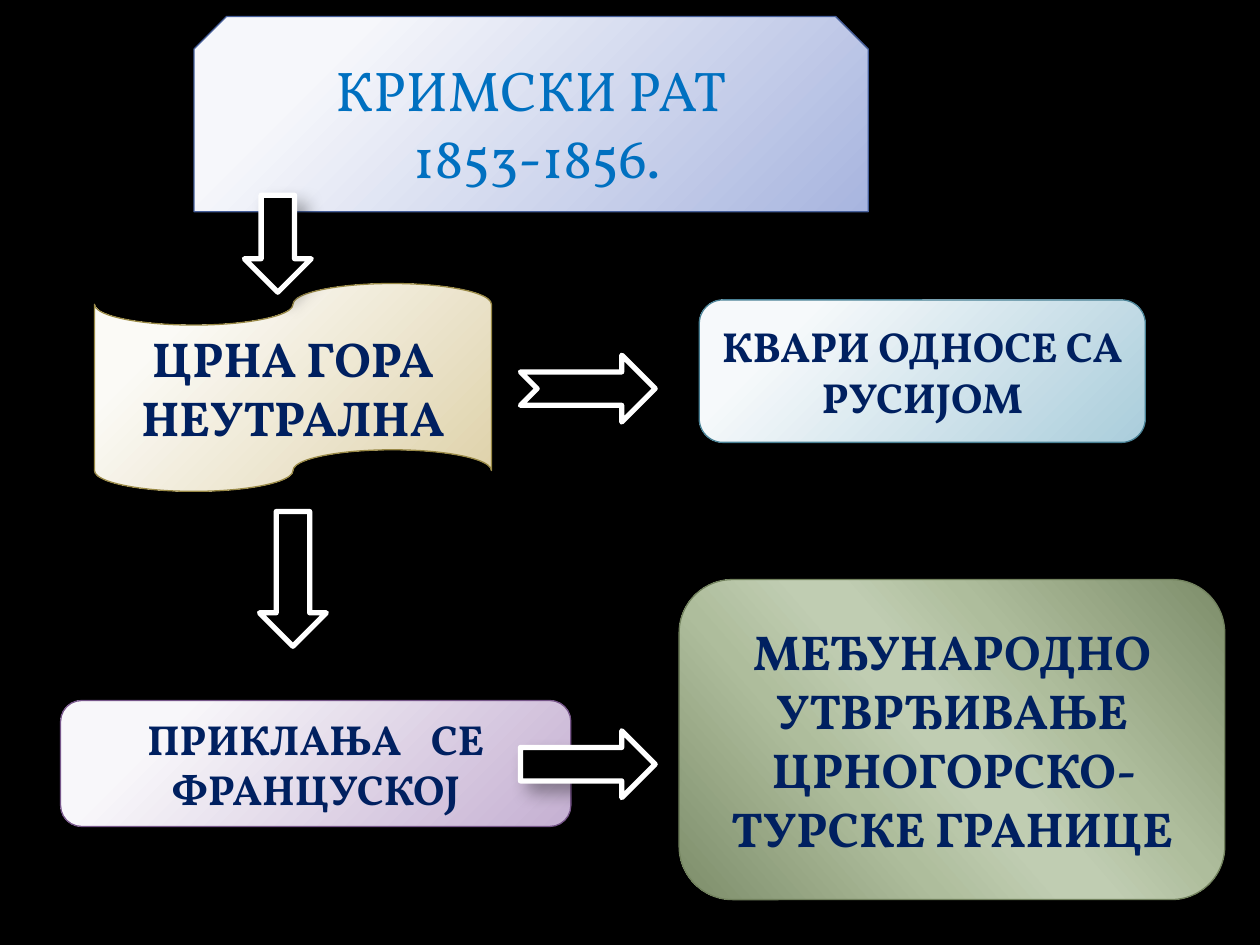
from pptx import Presentation
from pptx.dml.color import RGBColor
from pptx.enum import shapes, text
from pptx.oxml import parse_xml
from pptx.oxml.ns import nsdecls
from pptx.util import Pt

KIND = shapes.MSO_SHAPE
FONT = "Vollkorn"
BLACK = RGBColor(0x00, 0x00, 0x00)
WHITE = RGBColor(0xFF, 0xFF, 0xFF)
BLUE = RGBColor(0x00, 0x70, 0xC0)
NAVY = RGBColor(0x00, 0x20, 0x60)


def fade(pale, deep):
    return [(20, RGBColor.from_string(pale)), (100, RGBColor.from_string(deep))]


OLIVE, SAGE, MINT = (RGBColor(0x7D, 0x8D, 0x6A), RGBColor(0xAE, 0xBD, 0x9C),
                     RGBColor(0xC0, 0xCD, 0xB2))
GREEN = [(0, OLIVE), (33, SAGE), (47, MINT), (53, MINT), (68, SAGE), (100, OLIVE)]
RADIAL = ('<a:path path="circle"><a:fillToRect l="-15000" t="-15000" '
          'r="115000" b="115000"/></a:path>')
LINEAR = '<a:lin ang="8340000" scaled="0"/>'
SOFT = (35, 10.2, 8)
DEEP = (26, 15, 18)

BOXES = {
    "war": dict(kind=KIND.SNIP_2_SAME_RECTANGLE, at=(110.9, 9.4, 385.2, 111.6),
                stops=fade("F6F7FB", "A8B5DF"), edge=RGBColor(0x46, 0x5F, 0x9A),
                paras=[["КРИМСКИ РАТ"], [" 1853-1856."]], size=32, ink=BLUE, bold=False),
    "neutral": dict(kind=KIND.FLOWCHART_PUNCHED_TAPE, at=(54, 162, 226.8, 118.8),
                    stops=fade("FBFAF6", "DED1A8"), edge=RGBColor(0x99, 0x89, 0x46),
                    paras=[["ЦРНА ГОРА НЕУТРАЛНА"]], size=28),
    "russia": dict(kind=KIND.ROUNDED_RECTANGLE, at=(399.6, 171.4, 254.9, 81.4),
                   stops=fade("F6F9FB", "AACDDB"), edge=RGBColor(0x4A, 0x82, 0x96),
                   paras=[["КВАРИ ОДНОСЕ СА РУСИЈОМ"]], size=24),
    "france": dict(kind=KIND.ROUNDED_RECTANGLE, at=(34.6, 400.3, 291.6, 72),
                   stops=fade("F8F7FA", "C5B0D2"), edge=RGBColor(0x77, 0x56, 0x8A),
                   paras=[["ПРИКЛАЊА", (" ", 12), "СЕ ФРАНЦУСКОЈ"]], size=24),
    "border": dict(kind=KIND.ROUNDED_RECTANGLE, at=(388.1, 331.2, 311.8, 182.9),
                   stops=GREEN, edge=RGBColor(0x72, 0x82, 0x5E), shade=LINEAR, cast=DEEP,
                   paras=[["МЕЂУНАРОДНО УТВРЂИВАЊЕ ЦРНОГОРСКО-ТУРСКЕ ГРАНИЦЕ"]], size=28),
}
ARROWS = [
    (KIND.NOTCHED_RIGHT_ARROW, (297.4, 203, 77, 38.2)),
    (KIND.DOWN_ARROW, (148.3, 292.3, 38.2, 77)),
    (KIND.RIGHT_ARROW, (297.4, 417.6, 77, 38.2)),
    (KIND.DOWN_ARROW, (139.7, 111.6, 38.2, 55.4)),
]


def add_form(kind, at, edge, width, cast):
    form = slide.shapes.add_shape(kind, *map(Pt, at))
    form.line.color.rgb = edge
    form.line.width = Pt(width)
    form.shadow.inherit = False
    alpha, blur, dist = cast
    form._element.spPr.find("{*}effectLst").append(parse_xml(
        f'<a:outerShdw {nsdecls("a")} blurRad="{Pt(blur)}" dist="{Pt(dist)}" '
        f'dir="2700000" algn="tl" rotWithShape="0"><a:srgbClr val="000000">'
        f'<a:alpha val="{alpha * 1000}"/></a:srgbClr></a:outerShdw>'))
    return form


def add_box(kind, at, stops, edge, paras, size, ink=NAVY, bold=True,
            shade=RADIAL, cast=SOFT):
    box = add_form(kind, at, edge, 0.75, cast)
    box.fill.gradient()
    marks = "".join(f'<a:gs pos="{pos * 1000}"><a:srgbClr val="{tone}"/></a:gs>'
                    for pos, tone in stops)
    props = box._element.spPr
    props.replace(props.find("{*}gradFill"), parse_xml(
        f'<a:gradFill {nsdecls("a")} rotWithShape="1"><a:gsLst>{marks}</a:gsLst>'
        f'{shade}</a:gradFill>'))
    frame = box.text_frame
    frame.word_wrap = True
    frame.vertical_anchor = text.MSO_ANCHOR.MIDDLE
    for i, parts in enumerate(paras):
        para = frame.add_paragraph() if i else frame.paragraphs[0]
        para.alignment = text.PP_ALIGN.CENTER
        for part in parts:
            words, space = part if isinstance(part, tuple) else (part, 0)
            run = para.add_run()
            run.text = words
            run.font.name = FONT
            run.font.size = Pt(size)
            run.font.bold = bold
            run.font.color.rgb = ink
            if space:
                run.font._element.set("spc", str(space * 100))


def add_arrow(kind, at):
    arrow = add_form(kind, at, WHITE, 3, SOFT)
    arrow.fill.solid()
    arrow.fill.fore_color.rgb = BLACK


deck = Presentation()
deck.slide_width, deck.slide_height = Pt(720), Pt(540)
slide = deck.slides.add_slide(deck.slide_layouts[6])
slide.background.fill.solid()
slide.background.fill.fore_color.rgb = BLACK
for box in BOXES.values():
    add_box(**box)
for kind, at in ARROWS:
    add_arrow(kind, at)
deck.save("out.pptx")
